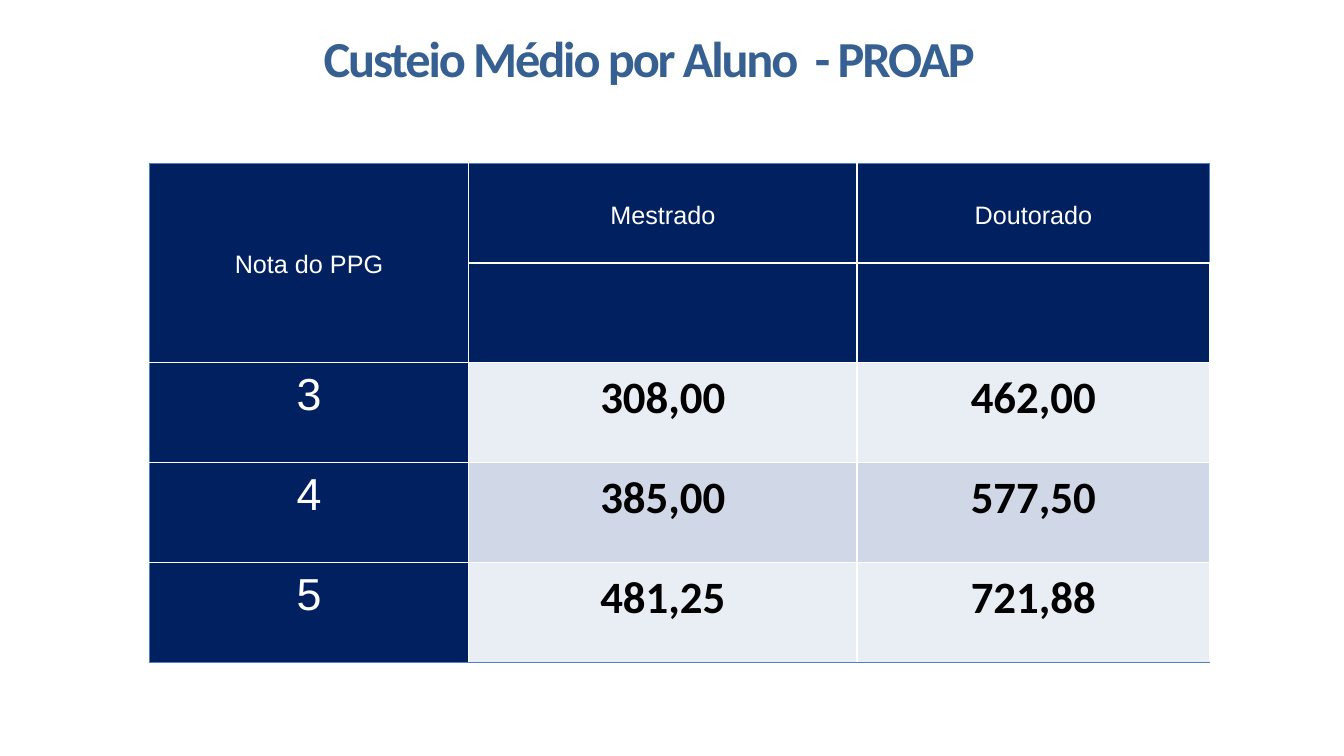
from lxml import etree
from pptx import Presentation
from pptx import util as u
from pptx.dml.color import RGBColor
from pptx.enum import text
from pptx.oxml import ns

WIDTH, HEIGHT = 13.33, 7.5
COLUMNS = (3.17, 3.85, 3.5)
ROW_HEIGHT = 0.99
NAVY, EDGE, WHITE, BLACK = "002060", "4F81BD", "FFFFFF", "000000"
BANDS = ("E9EDF4", "D0D8E8")
ROWS = (
    ("Nota do PPG", "Mestrado", "Doutorado"),
    ("", "", ""),
    ("3", "308,00", "462,00"),
    ("4", "385,00", "577,50"),
    ("5", "481,25", "721,88"),
)
HEADER_ROWS = 2


def rgb(value):
    return RGBColor.from_string(value)


def set_font(p, name, size, color, bold=False):
    p.font.name = name
    p.font.size = u.Pt(size)
    p.font.bold = bold
    p.font.color.rgb = rgb(color)


def set_borders(cell, colors):
    """Draw 1 pt borders; colors are left, right, top, bottom."""
    tcPr = cell._tc.get_or_add_tcPr()
    for i, (side, color) in enumerate(zip("LRTB", colors)):
        line = etree.Element(ns.qn(f"a:ln{side}"), w=str(u.Pt(1)))
        fill = etree.SubElement(line, ns.qn("a:solidFill"))
        etree.SubElement(fill, ns.qn("a:srgbClr"), val=color)
        tcPr.insert(i, line)


def add_title(s, wording):
    title = s.shapes.title
    title.left, title.top = u.Inches(3.02), u.Inches(0.22)
    title.width, title.height = u.Inches(9.65), u.Inches(1.18)
    tf = title.text_frame
    tf.auto_size = text.MSO_AUTO_SIZE.NONE
    tf.vertical_anchor = text.MSO_ANCHOR.TOP
    tf.margin_left = u.Inches(0.19)
    p = tf.paragraphs[0]
    p.alignment = text.PP_ALIGN.LEFT
    set_font(p, "Calibri", 36, "376092", bold=True)
    r = p.add_run()
    r.text = wording
    r._r.get_or_add_rPr().set("spc", "-150")


def format_cell(cell, row, col, wording):
    header, label = row < HEADER_ROWS, col == 0
    cell.fill.solid()
    band = BANDS[(row - HEADER_ROWS) % 2]
    cell.fill.fore_color.rgb = rgb(NAVY if header or label else band)
    cell.margin_left = cell.margin_right = u.Inches(0.07)
    cell.margin_top = cell.margin_bottom = 0
    cell.vertical_anchor = text.MSO_ANCHOR.MIDDLE if header else text.MSO_ANCHOR.TOP

    p = cell.text_frame.paragraphs[0]
    p.alignment = text.PP_ALIGN.CENTER
    p.line_spacing = 1.15
    if header or label:
        set_font(p, "Arial", 18 if header else 32, WHITE)
    else:
        set_font(p, "Calibri", 32, BLACK, bold=True)
    if wording:
        p.add_run().text = wording

    # Blue outer edges, white inner lines
    top = row == 0
    blue = (label, top and col == len(COLUMNS) - 1, top, row == len(ROWS) - 1)
    set_borders(cell, [EDGE if edge else WHITE for edge in blue])


def add_cost_table(s):
    frame = s.shapes.add_table(
        len(ROWS), len(COLUMNS), u.Inches(1.48), u.Inches(1.62),
        u.Inches(sum(COLUMNS)), u.Inches(ROW_HEIGHT * len(ROWS)))
    table = frame.table
    table.first_row = table.horz_banding = False
    for column, width in zip(table.columns, COLUMNS):
        column.width = u.Inches(width)
    for i, values in enumerate(ROWS):
        table.rows[i].height = u.Inches(ROW_HEIGHT)
        for j, wording in enumerate(values):
            format_cell(table.cell(i, j), i, j, wording)
    table.cell(0, 0).merge(table.cell(HEADER_ROWS - 1, 0))


def main():
    prs = Presentation()
    prs.slide_width, prs.slide_height = u.Inches(WIDTH), u.Inches(HEIGHT)
    s = prs.slides.add_slide(prs.slide_layouts[5])

    # Heading
    add_title(s, "Custeio Médio por Aluno  - PROAP")

    # Average cost by programme grade
    add_cost_table(s)
    prs.save("out.pptx")


if __name__ == "__main__":
    main()
